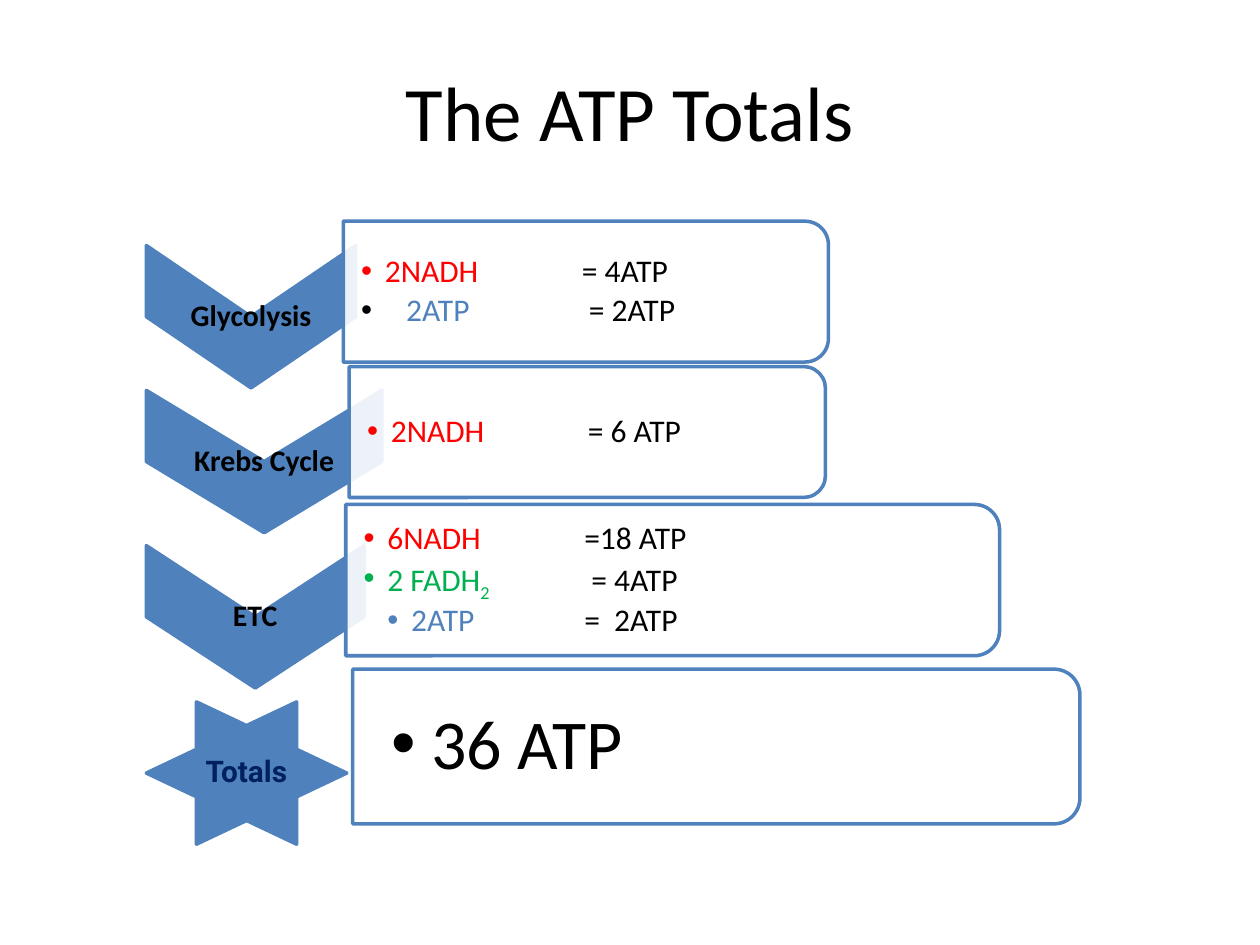
from lxml.etree import SubElement
from pptx import Presentation
from pptx.dml.color import RGBColor
from pptx.enum.shapes import MSO_SHAPE as Preset
from pptx.enum.text import MSO_ANCHOR as Anchor, PP_ALIGN as Align
from pptx.oxml.ns import qn
from pptx.util import Cm, Pt

BLUE, BLACK, RED, GREEN, NAVY = "4F81BD", "000000", "FF0000", "00B050", "002060"
RESULT_TAB = Cm(4.45)


def add_outline(slide, preset, box, fill, opacity):
    """Add a shape turned by 90 degrees that covers box once it is turned."""
    left, top, width, height = box
    shift = (width - height) / 2
    shape = slide.shapes.add_shape(
        preset, Cm(left + shift), Cm(top - shift), Cm(height), Cm(width))
    shape.rotation = 90
    shape.shadow.inherit = False
    shape.fill.solid()
    shape.fill.fore_color.rgb = RGBColor.from_string(fill)
    shape.line.color.rgb = RGBColor.from_string(BLUE)
    shape.line.width = Pt(2)
    color = shape.fill._xPr.find(qn("a:solidFill"))[0]
    SubElement(color, qn("a:alpha"), val=str(opacity * 1000))


def add_text(slide, box, paragraphs, inset=0.03, font="Calibri", size=18, bold=False):
    """Add paragraphs, each a pair of paragraph format and (text, colour) runs."""
    frame = slide.shapes.add_textbox(*map(Cm, box)).text_frame
    frame_format = {"word_wrap": True, "vertical_anchor": Anchor.MIDDLE,
                    "margin_left": Cm(inset), "margin_right": Cm(0.03),
                    "margin_top": Cm(0.03), "margin_bottom": Cm(0.03)}
    for name, value in frame_format.items():
        setattr(frame, name, value)
    for index, (layout, runs) in enumerate(paragraphs):
        paragraph = frame.add_paragraph() if index else frame.paragraphs[0]
        paragraph_format = {"alignment": layout.get("align", Align.LEFT),
                            "line_spacing": 0.9, "space_after": Pt(size * 0.15)}
        for name, value in paragraph_format.items():
            setattr(paragraph, name, value)
        if "bullet" in layout:
            properties = paragraph._p.get_or_add_pPr()
            properties.set("marL", str(Cm(layout["indent"])))
            properties.set("indent", str(-Cm(layout["hanging"])))
            bullet_color = SubElement(properties, qn("a:buClr"))
            SubElement(bullet_color, qn("a:srgbClr"), val=layout["bullet"])
            SubElement(properties, qn("a:buFont"), typeface="Arial")
            SubElement(properties, qn("a:buChar"), char="•")
            tabs = SubElement(properties, qn("a:tabLst"))
            SubElement(tabs, qn("a:tab"), pos=str(RESULT_TAB), algn="l")
        for text, color, *baseline in runs:
            run = paragraph.add_run()
            run.text = text
            run_format = {"name": font, "size": Pt(size), "bold": bold}
            for name, value in run_format.items():
                setattr(run.font, name, value)
            run.font.color.rgb = RGBColor.from_string(color)
            if baseline:
                run.font._element.set("baseline", str(baseline[0] * 1000))


presentation = Presentation()
presentation.slide_width, presentation.slide_height = Cm(25.4), Cm(19.05)
slide = presentation.slides.add_slide(presentation.slide_layouts[6])

centered = {"align": Align.CENTER}
red_item = {"bullet": RED, "indent": 0.48, "hanging": 0.48}
green_item = {**red_item, "bullet": GREEN}
shifted_item = {"bullet": BLACK, "indent": 0.91, "hanging": 0.91}
sub_item = {"bullet": BLUE, "indent": 0.96, "hanging": 0.48}
total_item = {"bullet": BLACK, "indent": 0.79, "hanging": 0.79}

add_text(slide, (1.27, 0.76, 22.86, 3.18),
         [(centered, [("The ATP Totals", BLACK)])], size=44)

# Stage: name, marker top and width, panel box, panel paragraphs
stages = [
    ("Glycolysis", 4.95, 4.22, (6.92, 4.46, 9.78, 2.84), [
        (red_item, [("2NADH ", RED), ("\t= 4ATP", BLACK)]),
        (shifted_item, [("2ATP ", BLUE), ("\t = 2ATP", BLACK)])]),
    ("Krebs Cycle", 7.87, 4.75, (7.04, 7.39, 9.6, 2.64), [
        (red_item, [("2NADH ", RED), ("\t= 6 ATP", BLACK)])]),
    ("ETC", 11, 4.39, (6.97, 10.17, 13.18, 3.05), [
        (red_item, [("6NADH", RED), ("\t=18 ATP", BLACK)]),
        (green_item, [("2 FADH", GREEN), ("2", GREEN, -25), ("\t = 4ATP", BLACK)]),
        (sub_item, [("2ATP ", BLUE), ("\t=  2ATP", BLACK)])]),
    ("Totals", 14.15, 4.04, (7.11, 13.49, 14.66, 3.12), [
        (total_item, [("36 ATP", BLACK)])]),
]
for name, marker_top, marker_width, panel, paragraphs in stages:
    is_total = name == "Totals"
    marker = (2.95, marker_top, marker_width, 2.87)
    add_outline(slide, Preset.STAR_6_POINT if is_total else Preset.CHEVRON,
                marker, BLUE, 100)
    add_text(slide, marker, [(centered, [(name, NAVY if is_total else BLACK)])],
             font="Roboto" if is_total else "Calibri", size=17, bold=True)
    add_outline(slide, Preset.ROUND_2_SAME_RECTANGLE, panel, "FFFFFF", 90)
    add_text(slide, panel, paragraphs, inset=0.79 if is_total else 0.36,
             size=40 if is_total else 18)

presentation.save("out.pptx")
